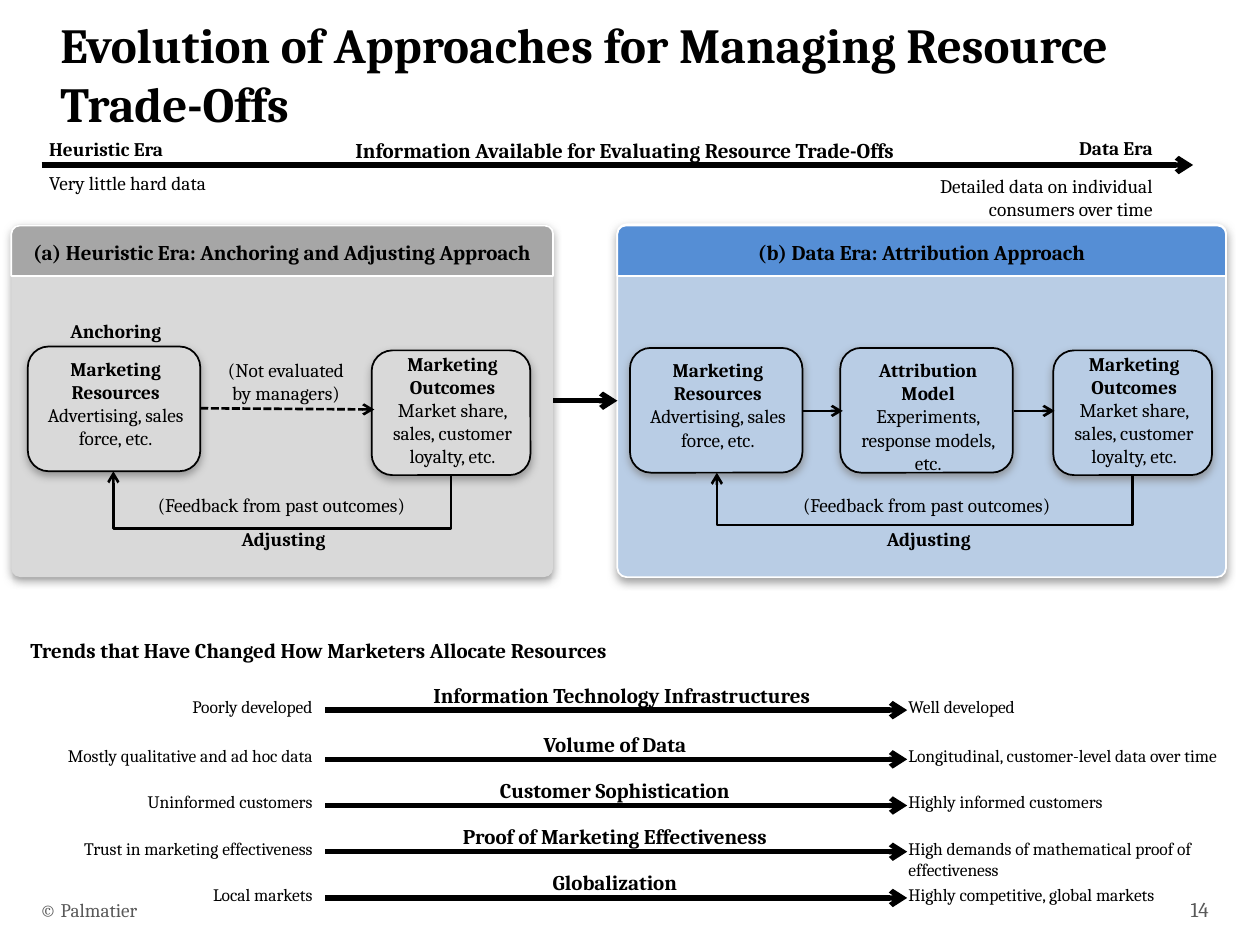
from lxml import etree
from pptx import Presentation
from pptx import util as u
from pptx.dml.color import RGBColor
from pptx.enum import dml, shapes, text
from pptx.oxml.ns import qn

Pt = u.Pt
BLACK = RGBColor(0x00, 0x00, 0x00)
WHITE = RGBColor(0xFF, 0xFF, 0xFF)
FOOTER_GREY = RGBColor(0x59, 0x59, 0x59)
GREY = RGBColor(0xD9, 0xD9, 0xD9)
DARK_GREY = RGBColor(0xA6, 0xA6, 0xA6)
BLUE = RGBColor(0xB9, 0xCD, 0xE5)
DARK_BLUE = RGBColor(0x55, 0x8E, 0xD5)
FONT = "Cambria"
LEFT, CENTER, RIGHT = text.PP_ALIGN.LEFT, text.PP_ALIGN.CENTER, text.PP_ALIGN.RIGHT
TOP, MIDDLE = text.MSO_ANCHOR.TOP, text.MSO_ANCHOR.MIDDLE

RESOURCES = ("Marketing Resources", "Advertising, sales force, etc.")
MODEL = ("Attribution Model", "Experiments, response models, etc.")
OUTCOMES = ("Marketing Outcomes", "Market share, sales, customer loyalty, etc.")
WIDE_HEADING, HEADING = (239.8, 231.1), (250.6, 201.6)
TRENDS = [
    (394.6, WIDE_HEADING, "Information Technology Infrastructures",
     "Poorly developed", "Well developed"),
    (422.7, HEADING, "Volume of Data", "Mostly qualitative and ad hoc data",
     "Longitudinal, customer-level data over time"),
    (449.1, HEADING, "Customer Sophistication", "Uninformed customers",
     "Highly informed customers"),
    (475.5, HEADING, "Proof of Marketing Effectiveness",
     "Trust in marketing effectiveness",
     "High demands of mathematical proof of effectiveness"),
    (501.9, HEADING, "Globalization", "Local markets",
     "Highly competitive, global markets"),
]


def write(frame, lines, size, bold, align, color=BLACK, anchor=TOP, inset=(6.5, 3.1)):
    """Fill a text frame; only the first line takes the bold setting."""
    frame.word_wrap = True
    frame.vertical_anchor = anchor
    frame.margin_left = frame.margin_right = Pt(inset[0])
    frame.margin_top = frame.margin_bottom = Pt(inset[1])
    for index, line in enumerate(lines):
        para = frame.paragraphs[0] if index == 0 else frame.add_paragraph()
        para.text = line
        para.alignment = align
        para.font.name = FONT
        para.font.size = Pt(size)
        para.font.bold = bold and index == 0
        para.font.color.rgb = color


def label(page, box, lines, size=11, bold=False, align=CENTER, **style):
    """Add a text box."""
    frame = page.shapes.add_textbox(*map(Pt, box)).text_frame
    write(frame, lines, size, bold, align, **style)


def block(page, kind, box, fill, line=None, radius=None, shadow=True):
    """Add a filled shape with an optional outline and soft shadow."""
    shape = page.shapes.add_shape(kind, *map(Pt, box))
    shape.shadow.inherit = False
    shape.fill.solid()
    shape.fill.fore_color.rgb = fill
    if line is None:
        shape.line.fill.background()
    else:
        shape.line.color.rgb = line
        shape.line.width = Pt(1)
    if radius is not None:
        shape.adjustments[0] = radius
    if shadow:
        effects = shape.element.spPr.find(qn("a:effectLst"))
        outer = etree.SubElement(effects, qn("a:outerShdw"), blurRad=str(Pt(5)),
                                 dist=str(Pt(2)), dir="5400000", rotWithShape="0")
        tint = etree.SubElement(outer, qn("a:srgbClr"), val="808080")
        etree.SubElement(tint, qn("a:alpha"), val="75000")
    return shape


def arrow(page, start, end, width, kind=shapes.MSO_CONNECTOR.STRAIGHT, dashed=False):
    """Add a black connector with an open arrowhead at its end."""
    connector = page.shapes.add_connector(kind, *map(Pt, (*start, *end)))
    connector.line.color.rgb = BLACK
    connector.line.width = Pt(width)
    if dashed:
        connector.line.dash_style = dml.MSO_LINE.SQUARE_DOT
    etree.SubElement(connector.line._get_or_add_ln(), qn("a:tailEnd"), type="arrow")
    etree.SubElement(connector.element.spPr, qn("a:effectLst"))
    return connector


def feedback(page, start, end, drop):
    """Route an elbow arrow down from start, leftwards, and up into end."""
    middle_x, middle_y = (start[0] + end[0]) / 2, (start[1] + end[1]) / 2
    rise, run = start[1] - end[1], start[0] - end[0]
    connector = arrow(page, (middle_x + rise / 2, middle_y - run / 2),
                      (middle_x - rise / 2, middle_y + run / 2), 1.5,
                      shapes.MSO_CONNECTOR.ELBOW)
    properties = connector.element.spPr
    properties.find(qn("a:xfrm")).set("rot", "5400000")
    guides = properties.find(qn("a:prstGeom")).find(qn("a:avLst"))
    etree.SubElement(guides, qn("a:gd"), name="adj1",
                     fmla=f"val {round(-drop / rise * 100000)}")


def step(page, box, lines, fill, text_shift):
    """Add a rounded step box with its text laid over it."""
    left, top, width, height = box
    block(page, shapes.MSO_SHAPE.ROUNDED_RECTANGLE, box, fill, BLACK)
    label(page, (left + 1.8, top + text_shift, width - 1.8, height), lines, bold=True)


def panel(page, box, heading, fill, band, edge, steps, loop, loop_text_left):
    """Add an era panel with its heading, steps and feedback loop."""
    left, top, width, height = box
    block(page, shapes.MSO_SHAPE.ROUNDED_RECTANGLE, box, fill, edge, 0.026)
    header = block(page, shapes.MSO_SHAPE.ROUND_2_SAME_RECTANGLE,
                   (left, top + 0.7, width, 28.8), band, WHITE, shadow=False)
    write(header.text_frame, [heading], 12, True, CENTER, anchor=MIDDLE, inset=(7.2, 3.6))
    for x, y, step_width, lines, text_shift in steps:
        step(page, (left + x, top + y, step_width, 71.3), lines, fill, text_shift)
    start_x, start_y, end_x, end_y, drop = loop
    feedback(page, (left + start_x, top + start_y), (left + end_x, top + end_y), drop)
    x = left + loop_text_left
    label(page, (x, top + 150.4, 190.8, 20.2), ["(Feedback from past outcomes)"])
    label(page, (x, top + 169.9, 193, 20.2), ["Adjusting"], bold=True)


def heuristic_panel(page, left, top):
    """Add the anchoring and adjusting panel."""
    panel(page, (left, top, 309.6, 201.6),
          "(a) Heuristic Era: Anchoring and Adjusting Approach", GREY, DARK_GREY, None,
          [(9.4, 69.8, 98.6, RESOURCES, 2.9), (205.9, 72, 90.7, OUTCOMES, -2.2)],
          (251.3, 143.3, 58.3, 141.1, 30.2), 59)
    label(page, (left + 11.5, top + 51.1, 96.5, 20.2), ["Anchoring"], bold=True)
    label(page, (left + 113.8, top + 73.4, 86.4, 33.1), ["(Not evaluated by managers)"])
    arrow(page, (left + 108, top + 105.1), (left + 207.4, top + 105.8), 1.5, dashed=True)


def data_panel(page, left, top):
    """Add the attribution panel."""
    panel(page, (left, top, 347.8, 201.6), "(b) Data Era: Attribution Approach",
          BLUE, DARK_BLUE, WHITE,
          [(7.2, 70.6, 98.6, RESOURCES, 2.9), (127.4, 70.6, 98.6, MODEL, 2.9),
           (249.1, 72, 90.7, OUTCOMES, -2.2)],
          (294.5, 143.3, 56.9, 141.9, 28.8), 81.4)
    for x in (105.8, 226.8):
        arrow(page, (left + x, top + 106.6), (left + x + 23, top + 106.6), 1.5)


def era_scale(page, left, top):
    """Add the arrow from the heuristic era to the data era."""
    label(page, (left + 167, top, 332.6, 20.9),
          ["Information Available for Evaluating Resource Trade-Offs"], 12, True)
    label(page, (left - 2.2, top, 136, 20.2), ["Heuristic Era"], bold=True, align=LEFT)
    label(page, (left + 461.5, top - 0.7, 180, 20.2), ["Data Era"], bold=True, align=RIGHT)
    label(page, (left - 2.2, top + 19.4, 136, 20.2), ["Very little hard data"], align=LEFT)
    label(page, (left + 461.5, top + 20.9, 180, 33.1),
          ["Detailed data on individual consumers over time"], align=RIGHT)
    arrow(page, (left, top + 18.7), (left + 658, top + 18.7), 3)


def trend_row(page, top, heading_span, heading, before, after):
    """Add one trend: what was, an arrow with its heading, and what is now."""
    label(page, (heading_span[0], top - 7.9, heading_span[1], 20.9), [heading], 12, True)
    label(page, (-5.8, top, 190.8, 18.7), [before], 10, align=RIGHT)
    arrow(page, (185.8, top + 11.2), (518.4, top + 11.2), 3)
    label(page, (512.6, top, 190.8, 18.7), [after], 10, align=LEFT)


def main():
    """Build the slide and save the deck."""
    deck = Presentation()
    deck.slide_width, deck.slide_height = Pt(720), Pt(540)
    page = deck.slides.add_slide(deck.slide_layouts[6])
    label(page, (27.4, 5, 647.3, 63.4),
          ["Evolution of Approaches for Managing Resource Trade-Offs"], 28, True, LEFT,
          inset=(7.2, 3.6))
    era_scale(page, 23.8, 75.6)
    heuristic_panel(page, 6.5, 128.2)
    data_panel(page, 352.8, 128.2)
    arrow(page, (316.1, 229), (352.8, 229), 3)
    label(page, (10.8, 361.4, 354.2, 20.9),
          ["Trends that Have Changed How Marketers Allocate Resources"], 12, True, LEFT)
    for trend in TRENDS:
        trend_row(page, *trend)
    footer = {"color": FOOTER_GREY, "anchor": MIDDLE, "inset": (7.2, 3.6)}
    label(page, (653.8, 505.4, 43.9, 28.8), ["14"], 12, align=RIGHT, **footer)
    label(page, (15.8, 505.4, 482.4, 28.8), ["© Palmatier"], align=LEFT, **footer)
    deck.save("out.pptx")


if __name__ == "__main__":
    main()
